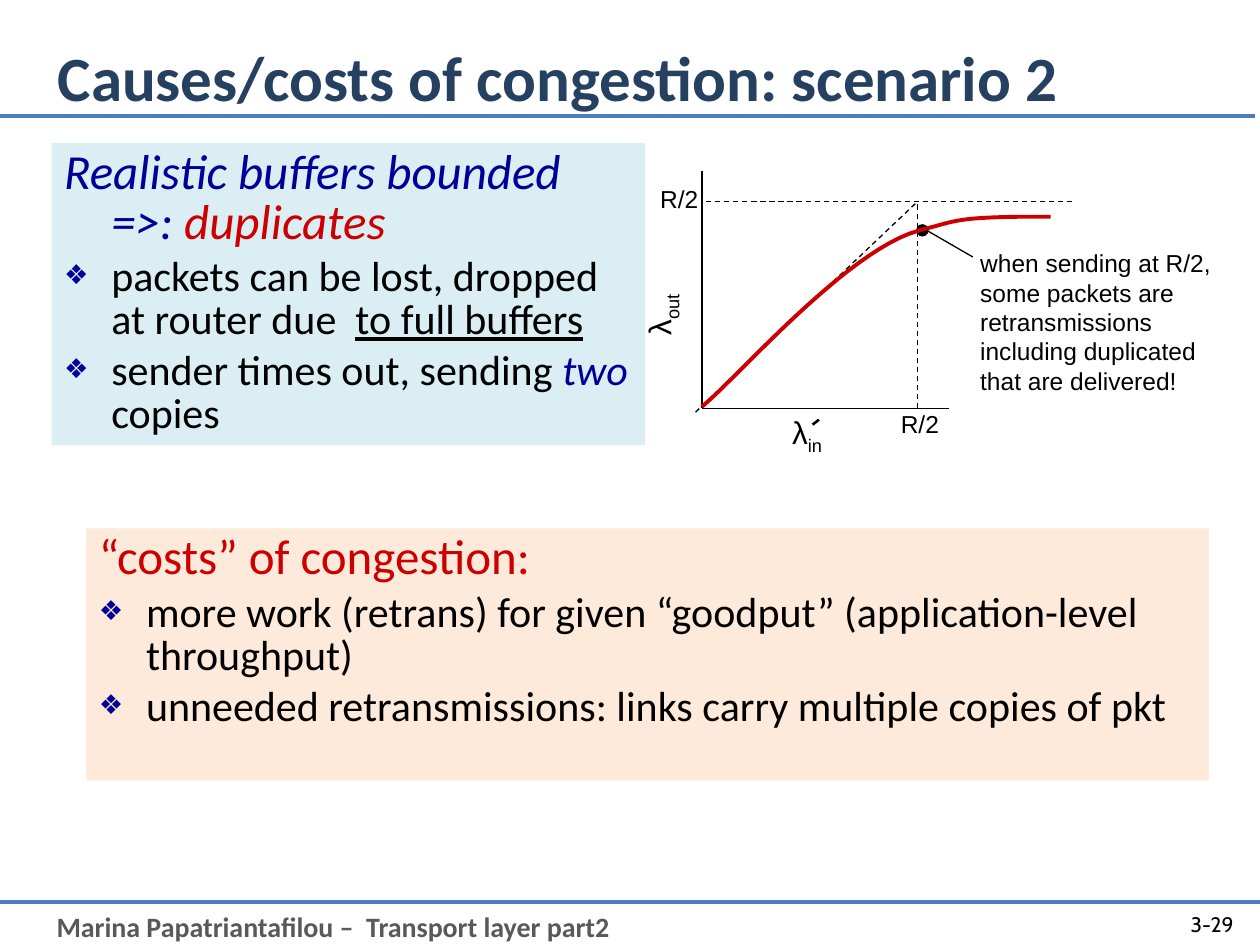
from dataclasses import dataclass

from lxml import etree
from pptx import Presentation
from pptx import util as u
from pptx.dml.color import RGBColor
from pptx.enum import dml, shapes, text
from pptx.oxml.ns import qn

COLORS = {
    "black": "000000", "rule": "4B7EBC", "footer": "595959", "title": "254061",
    "red": "CC0000", "blue": "000099", "peach": "FDEADA", "ice": "DBEEF4",
}
HANGING = u.Cm(0.95)
ORIGIN_X, AXIS_Y, CAPACITY_Y, CAPACITY_X = 14.15, 8.23, 4.06, 18.5


@dataclass
class Span:
    words: str
    color: str = "black"
    italic: bool = False
    underline: bool = False


@dataclass
class Item:
    spans: list[Span]
    size: int = 24
    bullet: bool = True


@dataclass
class Segment:
    start: tuple[float, float]
    end: tuple[float, float]
    color: str = "black"
    width: float = 0.75
    dashed: bool = False


@dataclass
class Label:
    words: str
    box: tuple[float, float, float, float]
    size: int = 14
    font: str = "Arial"
    color: str = "black"
    bold: bool = False
    wrap: bool = False
    subscript: str = ""
    rotation: int = 0
    align: text.PP_ALIGN = text.PP_ALIGN.LEFT
    anchor: text.MSO_ANCHOR = text.MSO_ANCHOR.TOP


def rgb(name: str) -> RGBColor:
    return RGBColor.from_string(COLORS[name])


def add_run(paragraph, words: str, *, size: int, font: str = "Calibri", color: str = "black",
            bold: bool = False, italic: bool = False, underline: bool = False,
            baseline: int = 0) -> None:
    run = paragraph.add_run()
    run.text = words
    style = run.font
    style.name, style.size = font, u.Pt(size)
    style.bold, style.italic, style.underline = bold, italic, underline
    style.color.rgb = rgb(color)
    if baseline:
        run._r.get_or_add_rPr().set("baseline", str(baseline))


def place(shape, box: tuple[float, float, float, float]) -> None:
    shape.left, shape.top, shape.width, shape.height = map(u.Cm, box)


def add_label(slide, label: Label) -> None:
    holder = slide.shapes.add_textbox(*map(u.Cm, label.box))
    holder.rotation = label.rotation
    frame = holder.text_frame
    frame.word_wrap, frame.vertical_anchor = label.wrap, label.anchor
    paragraph = frame.paragraphs[0]
    paragraph.alignment = label.align
    style = dict(size=label.size, font=label.font, color=label.color, bold=label.bold)
    add_run(paragraph, label.words, **style)
    if label.subscript:
        add_run(paragraph, label.subscript, baseline=-25000, **style)


def add_segment(slide, segment: Segment) -> None:
    line = slide.shapes.add_connector(
        shapes.MSO_CONNECTOR.STRAIGHT, *map(u.Cm, segment.start + segment.end))
    line.line.color.rgb = rgb(segment.color)
    line.line.width = u.Pt(segment.width)
    if segment.dashed:
        line.line.dash_style = dml.MSO_LINE.DASH
    etree.SubElement(line._element.spPr, qn("a:effectLst"))


def set_bullet(paragraph, shown: bool) -> None:
    props = paragraph._p.get_or_add_pPr()
    props.set("marL", str(HANGING))
    props.set("indent", str(-HANGING))
    if not shown:
        etree.SubElement(props, qn("a:buNone"))
        return
    color = etree.SubElement(props, qn("a:buClr"))
    etree.SubElement(color, qn("a:srgbClr"), val=COLORS["blue"])
    etree.SubElement(props, qn("a:buSzPct"), val="65000")
    etree.SubElement(props, qn("a:buChar"), char="❖")


def fill_panel(panel, box: tuple[float, float, float, float], fill: str,
               items: list[Item]) -> None:
    place(panel, box)
    panel.fill.solid()
    panel.fill.fore_color.rgb = rgb(fill)
    frame = panel.text_frame
    frame.auto_size = text.MSO_AUTO_SIZE.NONE
    for number, item in enumerate(items):
        paragraph = frame.add_paragraph() if number else frame.paragraphs[0]
        paragraph.line_spacing = 0.85
        set_bullet(paragraph, item.bullet)
        for span in item.spans:
            add_run(paragraph, span.words, size=item.size, color=span.color,
                    italic=span.italic, underline=span.underline)


def bezier(points: list[tuple[float, float]], steps: int = 24) -> list[tuple[float, float]]:
    def at(t: float) -> tuple[float, float]:
        weights = ((1 - t) ** 3, 3 * t * (1 - t) ** 2, 3 * t * t * (1 - t), t ** 3)
        return tuple(sum(w * p[axis] for w, p in zip(weights, points)) for axis in (0, 1))

    return [at(step / steps) for step in range(1, steps + 1)]


def add_throughput_curve(slide) -> None:
    start, knee, plateau, end = (ORIGIN_X, 8.2), (18.52, 4.65), (20.6, 4.37), (21.18, 4.37)
    points = bezier([start, (14.86, 7.62), (17.07, 5.05), knee])
    points += bezier([knee, (19.3, 4.45), (19.25, 4.39), plateau]) + [end]
    builder = slide.shapes.build_freeform(*map(u.Cm, start))
    builder.add_line_segments([(u.Cm(x), u.Cm(y)) for x, y in points], close=False)
    curve = builder.convert_to_shape()
    curve.shadow.inherit = False
    curve.fill.background()
    curve.line.color.rgb = rgb("red")
    curve.line.width = u.Pt(2.25)


def main() -> None:
    deck = Presentation()
    deck.slide_width, deck.slide_height = u.Cm(25.4), u.Cm(19.05)
    slide = deck.slides.add_slide(deck.slide_layouts[3])
    title, buffers, costs = slide.placeholders

    place(title, (0.91, 0.33, 23.44, 2.41))
    title.text_frame.vertical_anchor = text.MSO_ANCHOR.MIDDLE
    heading = title.text_frame.paragraphs[0]
    heading.alignment = text.PP_ALIGN.LEFT
    add_run(heading, "Causes/costs of congestion: scenario 2", size=36, color="title", bold=True)

    fill_panel(buffers, (1.04, 2.88, 11.96, 6.1), "ice", [
        Item([Span("Realistic buffers bounded =>: ", "blue", italic=True),
              Span("duplicates", "red", italic=True)], 28, False),
        Item([Span("packets can be lost, dropped at router due  "),
              Span("to full buffers", underline=True)]),
        Item([Span("sender times out, sending "), Span("two ", "blue", italic=True),
              Span("copies")]),
    ])
    fill_panel(costs, (1.74, 10.65, 22.63, 5.08), "peach", [
        Item([Span("“costs” of congestion:", "red")], 28, False),
        Item([Span("more work (retrans) for given “goodput” (application-level throughput)")]),
        Item([Span("unneeded retransmissions: links carry multiple copies of pkt")]),
    ])

    for segment in (
        Segment((0, 18.19), (25.4, 18.19), "rule", 2.25),
        Segment((-0.1, 2.33), (25.3, 2.33), "rule", 2.25),
        Segment((ORIGIN_X, 3.45), (ORIGIN_X, AXIS_Y)),
        Segment((19.13, AXIS_Y), (ORIGIN_X, AXIS_Y)),
        Segment((21.62, CAPACITY_Y), (ORIGIN_X, CAPACITY_Y), dashed=True),
        Segment((14.02, 8.31), (CAPACITY_X, CAPACITY_Y), dashed=True),
        Segment((CAPACITY_X, AXIS_Y), (CAPACITY_X, CAPACITY_Y), dashed=True),
        Segment((19.61, 5.18), (18.52, 4.55)),
        Segment((16.38, 8.56), (16.51, 8.46), width=1.5),
    ):
        add_segment(slide, segment)

    operating_point = slide.shapes.add_shape(
        shapes.MSO_SHAPE.OVAL, *map(u.Cm, (18.47, 4.52, 0.25, 0.25)))
    operating_point.shadow.inherit = False
    operating_point.fill.solid()
    operating_point.fill.fore_color.rgb = rgb("black")
    operating_point.line.fill.background()
    add_throughput_curve(slide)

    for label in (
        Label("R/2", (13.06, 3.58, 1.27, 0.84)),
        Label("R/2", (17.91, 8.13, 1.27, 0.84)),
        Label("λ", (12.42, 5.64, 1.73, 1.02), 18, subscript="out", rotation=270, wrap=True),
        Label("λ", (15.72, 8.2, 1.19, 1.02), 18, subscript="in"),
        Label("when sending at R/2, some packets are retransmissions including duplicated "
              "that are delivered!", (19.51, 4.88, 5.23, 3.2), wrap=True),
        Label("Marina Papatriantafilou –  Transport layer part2", (0.89, 18.21, 23.5, 0.94),
              16, "Calibri", "footer", bold=True, wrap=True),
        Label("3-29", (23.09, 18.11, 2.03, 1.02), 12, "Cabin", wrap=True,
              align=text.PP_ALIGN.RIGHT, anchor=text.MSO_ANCHOR.MIDDLE),
    ):
        add_label(slide, label)

    deck.save("out.pptx")


if __name__ == "__main__":
    main()
